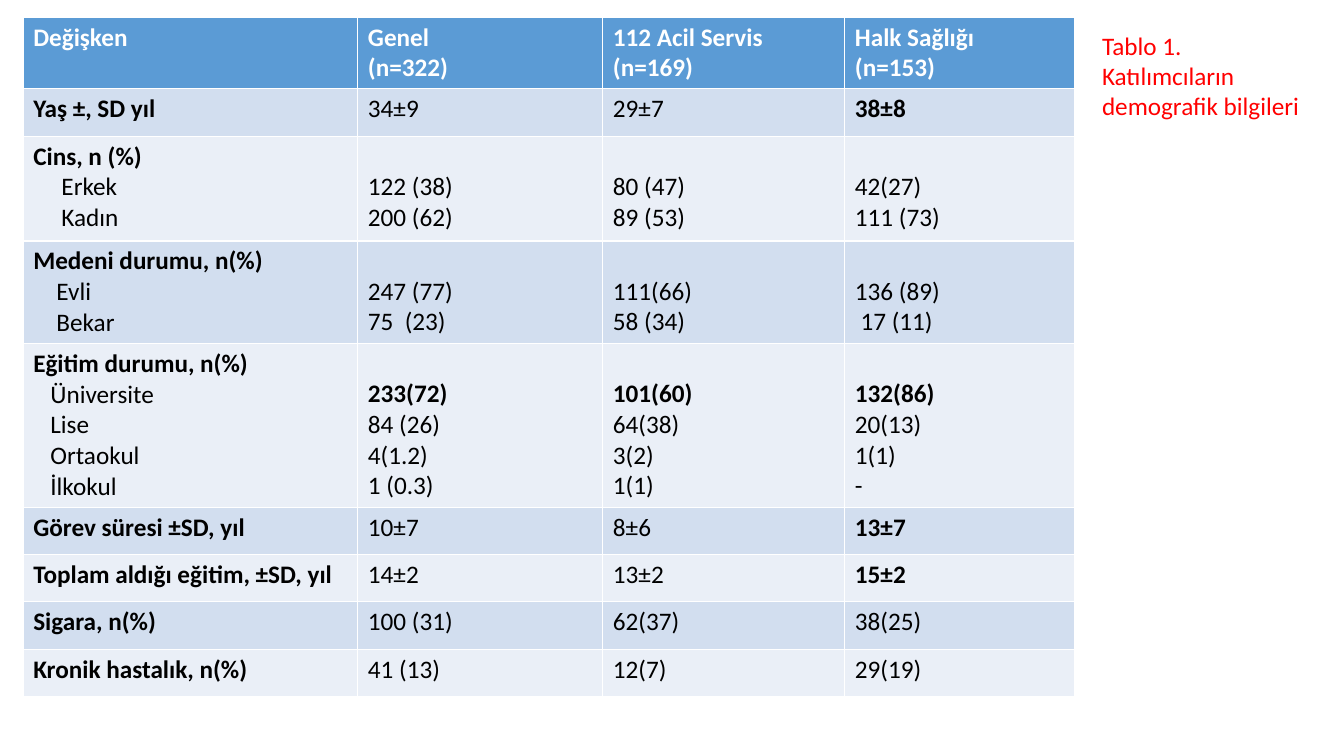
"""Build a slide with the participants' demographic table and its caption."""
import pptx
import pptx.dml.color
import pptx.enum.text
import pptx.util

PX = 9144


def px(n):
    return pptx.util.Emu(n * PX)


def add_run(p, text, color, bold):
    r = p.add_run()
    r.text = text
    r.font.name = "Calibri"
    r.font.size = pptx.util.Pt(18)
    r.font.bold = bold
    r.font.color.rgb = pptx.dml.color.RGBColor.from_string(color)


COL_WIDTHS = [332, 243, 240, 228]
HEADER = ["Değişken", "Genel\n(n=322)", "112 Acil Servis\n(n=169)", "Halk Sağlığı\n(n=153)"]
ROWS = [
    (47, 0, ["Yaş ±, SD yıl", "34±9", "29±7", "38±8"]),
    (104, 28, ["Cins, n (%)\nErkek\nKadın", "122 (38)\n200 (62)", "80 (47)\n89 (53)", "42(27)\n111 (73)"]),
    (98, 23, ["Medeni durumu, n(%)\nEvli\nBekar", "247 (77)\n75  (23)", "111(66)\n58 (34)", "136 (89)\n 17 (11)"]),
    (157, 17, ["Eğitim durumu, n(%)\nÜniversite\nLise\nOrtaokul\nİlkokul", "233(72)\n84 (26)\n4(1.2)\n1 (0.3)",
               "101(60)\n64(38)\n3(2)\n1(1)", "132(86)\n20(13)\n1(1)\n-"]),
    (47, 0, ["Görev süresi ±SD, yıl", "10±7", "8±6", "13±7"]),
    (47, 0, ["Toplam aldığı eğitim, ±SD, yıl", "14±2", "13±2", "15±2"]),
    (47, 0, ["Sigara, n(%)", "100 (31)", "62(37)", "38(25)"]),
    (47, 0, ["Kronik hastalık, n(%)", "41 (13)", "12(7)", "29(19)"]),
]
BOLD_VALUES = {"38±8", "233(72)", "101(60)", "132(86)", "13±7", "15±2"}

prs = pptx.Presentation()
prs.slide_width, prs.slide_height = px(1333), px(750)
s = prs.slides.add_slide(prs.slide_layouts[5])

title = s.shapes.title
title.left, title.top, title.width, title.height = px(1083), px(25), px(227), px(101)
tf = title.text_frame
tf.word_wrap = True
tf.auto_size = pptx.enum.text.MSO_AUTO_SIZE.NONE
tf.vertical_anchor = pptx.enum.text.MSO_ANCHOR.TOP
tf.paragraphs[0].alignment = pptx.enum.text.PP_ALIGN.LEFT
add_run(tf.paragraphs[0], "Tablo 1. Katılımcıların demografik bilgileri", "FF0000", False)

all_rows = [(67, 0, HEADER)] + ROWS
table = s.shapes.add_table(len(all_rows), len(COL_WIDTHS), px(23), px(17), px(sum(COL_WIDTHS)), px(669)).table
for column, width in zip(table.columns, COL_WIDTHS):
    column.width = px(width)

for i, (height, indent, texts) in enumerate(all_rows):
    table.rows[i].height = px(height)
    fill = "5B9BD5" if i == 0 else ["EAEFF7", "D2DEEF"][i % 2]
    for j, text in enumerate(texts):
        cell = table.cell(i, j)
        cell.fill.solid()
        cell.fill.fore_color.rgb = pptx.dml.color.RGBColor.from_string(fill)
        if indent and j > 0:
            cell.margin_top = px(35)
        for k, line in enumerate(text.split("\n")):
            p = cell.text_frame.paragraphs[0] if k == 0 else cell.text_frame.add_paragraph()
            if j == 0 and k > 0:
                p._p.get_or_add_pPr().set("marL", str(px(indent)))
            bold = i == 0 or (j == 0 and k == 0) or line in BOLD_VALUES
            add_run(p, line, "FFFFFF" if i == 0 else "000000", bold)

prs.save("out.pptx")
